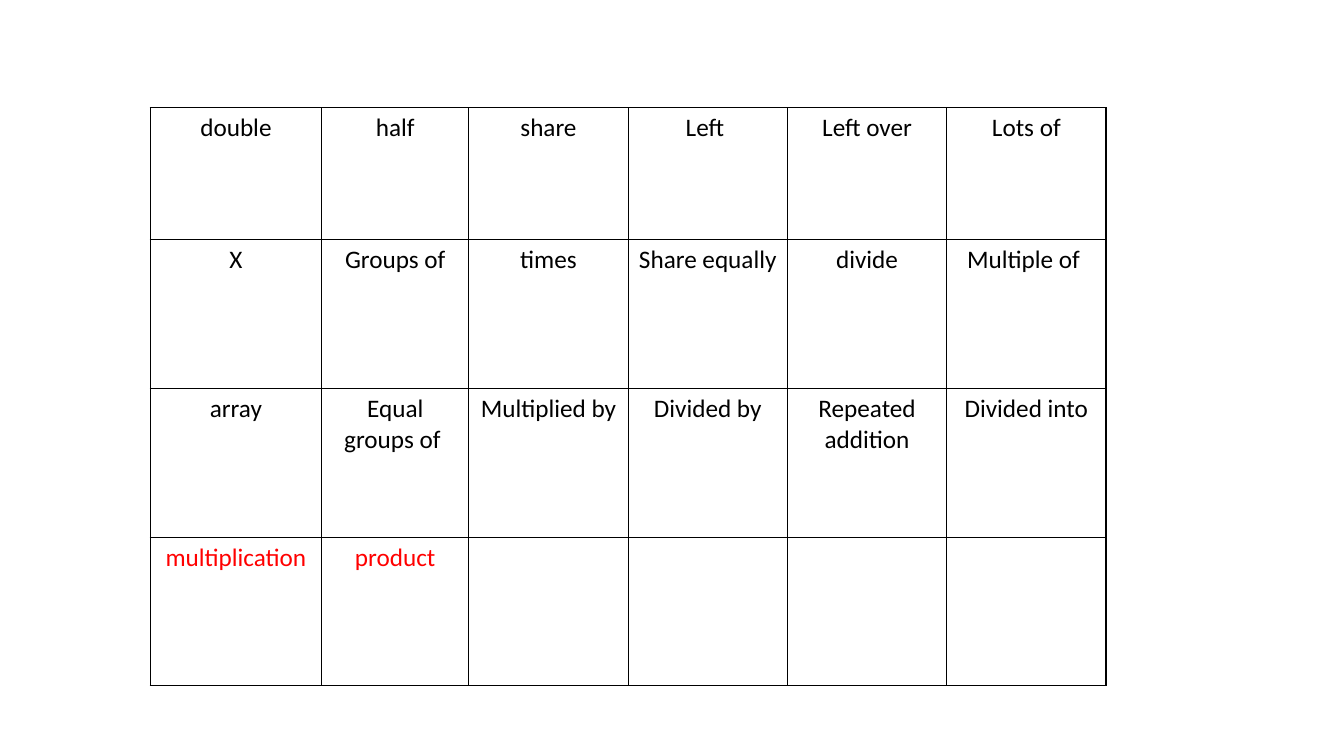
from dataclasses import dataclass

from lxml import etree
from pptx import Presentation
from pptx.dml.color import RGBColor
from pptx.enum import text
from pptx.oxml import ns
from pptx.util import Inches, Pt

WORDS = [
    ["double", "half", "share", "Left ", "Left over", "Lots of"],
    ["X", "Groups of", "times", "Share equally", "divide", "Multiple of "],
    ["array", "Equal groups of ", "Multiplied by", "Divided by", "Repeated addition", "Divided into"],
    ["multiplication", "product", "", "", "", ""],
]
NEW_WORDS = {"multiplication", "product"}
COLUMN_WIDTHS = [1.7, 1.46] + [1.58] * 4
ROW_HEIGHTS = [1.31] + [1.475] * 3
LEFT, TOP = 1.49, 1.07


@dataclass(frozen=True)
class Theme:
    font: str = "Calibri"
    size: int = 18
    ink: str = "000000"
    accent: str = "FF0000"
    paper: str = "FFFFFF"
    border: int = 1


THEME = Theme()


def draw_borders(cell):
    properties = cell._tc.get_or_add_tcPr()
    for side in ("lnL", "lnR", "lnT", "lnB"):
        line = etree.SubElement(properties, ns.qn(f"a:{side}"), w=str(Pt(THEME.border)))
        fill = etree.SubElement(line, ns.qn("a:solidFill"))
        etree.SubElement(fill, ns.qn("a:srgbClr"), val=THEME.ink)


def fill_cell(cell, word):
    draw_borders(cell)
    cell.fill.solid()
    cell.fill.fore_color.rgb = RGBColor.from_string(THEME.paper)
    cell.text_frame.text = word
    para = cell.text_frame.paragraphs[0]
    para.alignment = text.PP_ALIGN.CENTER
    para.font.size = Pt(THEME.size)
    color = THEME.accent if word in NEW_WORDS else THEME.ink
    for span in para.runs:
        span.font.name = THEME.font
        span.font.size = Pt(THEME.size)
        span.font.bold = False
        span.font.color.rgb = RGBColor.from_string(color)


def main():
    deck = Presentation()
    deck.slide_width, deck.slide_height = Inches(13.33), Inches(7.5)
    page = deck.slides.add_slide(deck.slide_layouts[6])
    table = page.shapes.add_table(
        len(ROW_HEIGHTS), len(COLUMN_WIDTHS), Inches(LEFT), Inches(TOP),
        Inches(sum(COLUMN_WIDTHS)), Inches(sum(ROW_HEIGHTS)),
    ).table
    table.first_row = table.horz_banding = False
    for column, width in zip(table.columns, COLUMN_WIDTHS):
        column.width = Inches(width)
    for row, height, words in zip(table.rows, ROW_HEIGHTS, WORDS):
        row.height = Inches(height)
        for cell, word in zip(row.cells, words):
            fill_cell(cell, word)
    deck.save("out.pptx")


if __name__ == "__main__":
    main()
